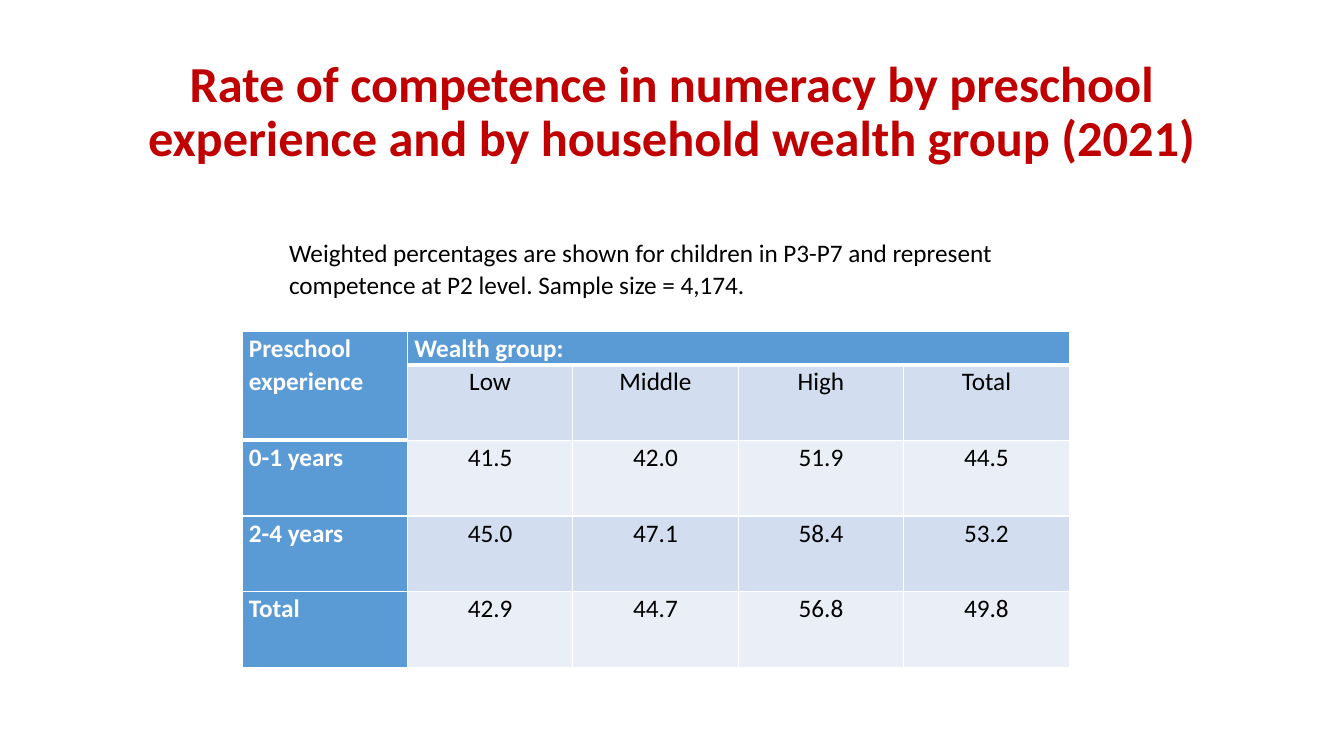
from lxml import etree
from pptx import Presentation
from pptx.dml.color import RGBColor
from pptx.enum import text
from pptx.oxml import ns
from pptx.util import Pt

COLORS = {"title": "C00000", "head": "5B9BD5", "dark": "D2DEEF",
          "light": "EAEFF7", "white": "FFFFFF", "black": "000000"}


def write(tf, words, size, color, bold, align, spacing, after):
    p = tf.paragraphs[0]
    p.alignment = align
    p.line_spacing = spacing
    p.space_after = Pt(after)
    r = p.add_run()
    r.text = words
    r.font.name = "Calibri"
    r.font.size = Pt(size)
    r.font.bold = bold
    r.font.color.rgb = RGBColor.from_string(COLORS[color])


def add_border(cell, index, side, width):
    ln = etree.Element(ns.qn(f"a:ln{side}"), w=str(Pt(width)))
    fill = etree.SubElement(ln, ns.qn("a:solidFill"))
    etree.SubElement(fill, ns.qn("a:srgbClr"), val=COLORS["white"])
    cell._tc.get_or_add_tcPr().insert(index, ln)


LEFT, CENTER = text.PP_ALIGN.LEFT, text.PP_ALIGN.CENTER

prs = Presentation()
prs.slide_width, prs.slide_height = Pt(960), Pt(540)
s = prs.slides.add_slide(prs.slide_layouts[5])

title = s.shapes.title
title.left, title.top, title.width, title.height = Pt(66), Pt(28.75), Pt(828), Pt(104.4)
tf = title.text_frame
tf.auto_size = text.MSO_AUTO_SIZE.NONE
tf.vertical_anchor = text.MSO_ANCHOR.MIDDLE
write(tf, "Rate of competence in numeracy by preschool experience and by household wealth group (2021)",
      36, "title", True, CENTER, 0.9, 0)

note = s.shapes.add_textbox(Pt(199.4), Pt(164.2), Pt(535), Pt(52.6))
note.text_frame.word_wrap = True
write(note.text_frame,
      "Weighted percentages are shown for children in P3-P7 and represent competence at P2 level. Sample size = 4,174.",
      18, "black", False, LEFT, 1.07, 8)

rows = [
    ["Preschool experience", "Wealth group:", "", "", ""],
    ["", "Low", "Middle", "High", "Total"],
    ["0-1 years", "41.5", "42.0", "51.9", "44.5"],
    ["2-4 years", "45.0", "47.1", "58.4", "53.2"],
    ["Total", "42.9", "44.7", "56.8", "49.8"],
]
heights = [23.5] + [54] * 4
table = s.shapes.add_table(5, 5, Pt(172.8), Pt(237), Pt(591), Pt(sum(heights))).table
for column in table.columns:
    column.width = Pt(118.2)
for row, height in zip(table.rows, heights):
    row.height = Pt(height)
table.cell(0, 0).merge(table.cell(1, 0))
table.cell(0, 1).merge(table.cell(0, 4))

for i, row in enumerate(rows):
    for j, words in enumerate(row):
        cell = table.cell(i, j)
        is_head = i == 0 or j == 0
        cell.margin_left = cell.margin_right = Pt(5)
        cell.margin_top = cell.margin_bottom = 0
        cell.fill.solid()
        fill = "head" if is_head else "dark" if i % 2 else "light"
        cell.fill.fore_color.rgb = RGBColor.from_string(COLORS[fill])
        last_head_row = 1 if j == 0 else 0
        widths = {"L": 1, "R": 1,
                  "T": 3 if i == last_head_row + 1 else 1,
                  "B": 3 if i <= last_head_row else 1}
        for index, (side, width) in enumerate(widths.items()):
            add_border(cell, index, side, width)
        if words:
            write(cell.text_frame, words, 18, "white" if is_head else "black",
                  is_head, LEFT if is_head else CENTER, 1.07, 8)

prs.save("out.pptx")
